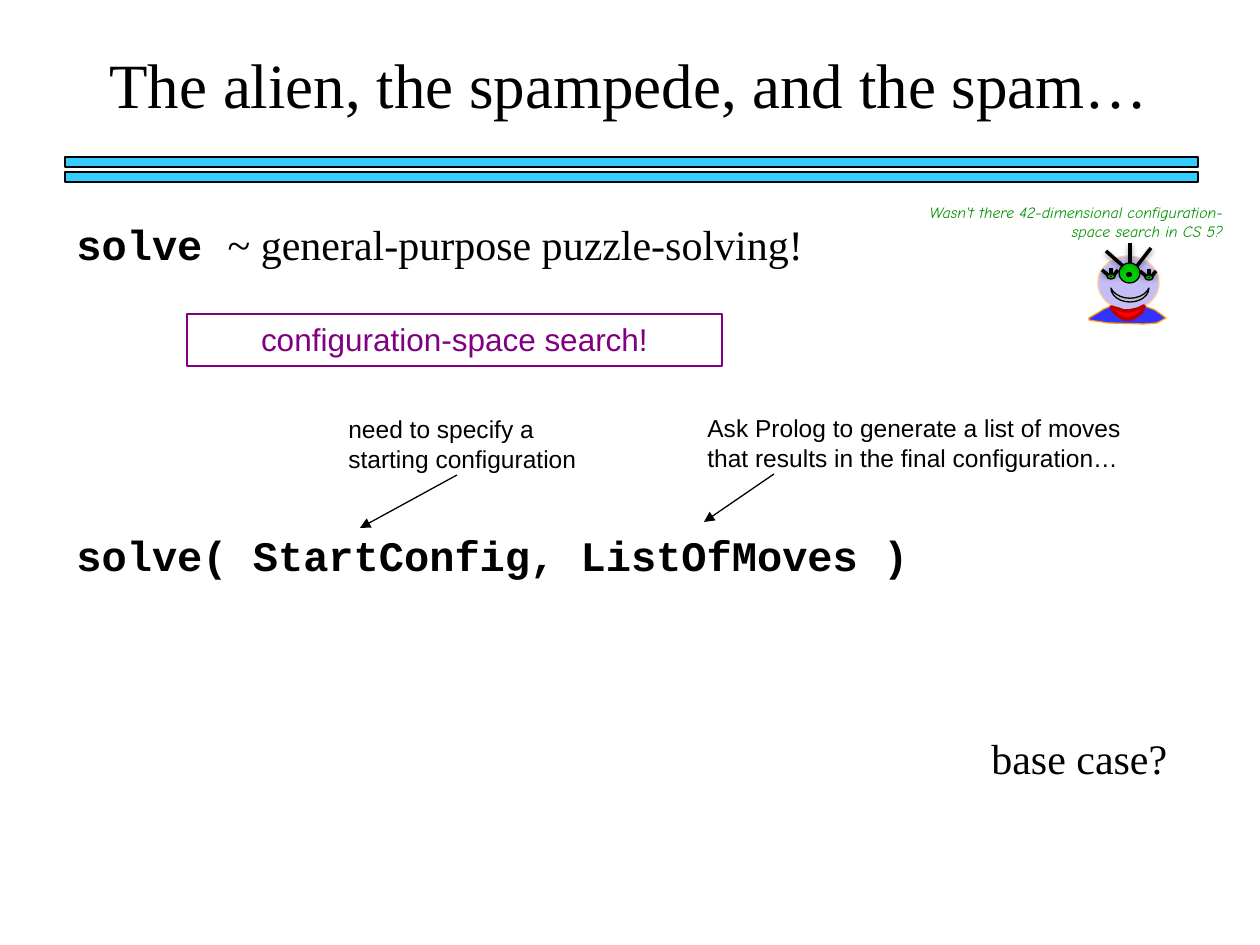
from lxml.etree import SubElement
from pptx import Presentation
from pptx.dml.color import RGBColor
from pptx.enum.shapes import MSO_CONNECTOR, MSO_SHAPE as SHAPE
from pptx.enum.text import MSO_ANCHOR, MSO_AUTO_SIZE, PP_ALIGN as ALIGN
from pptx.oxml.ns import qn
from pptx.util import Inches, Pt

PX = Inches(1) / 126
COLORS = {
    "black": "000000", "bar": "33CCFF", "purple": "800080", "remark": "009200",
    "body": "3333FF", "body edge": "FD9D0F", "head": "C4BDF6", "head edge": "FFCC99",
    "eye": "00CC00", "scarf": "FF0000", "scarf edge": "BD0000", "mouth": "C0C0C0",
}
SERIF, SANS, MONO, COMIC = "Times New Roman", "Arial", "Courier New", "Comic Neue"


def emu(*lengths):
    return [round(length * PX) for length in lengths]


def rgb(name):
    return RGBColor.from_string(COLORS[name])


class SlideBuilder:
    def __init__(self, slide):
        self.slide = slide
        self.shapes = slide.shapes

    def set_text(self, shape, runs, size, color="black", align=ALIGN.LEFT, wrap=True):
        """Fill a shape with one paragraph of (text, font, bold, italic) runs."""
        frame = shape.text_frame
        frame.word_wrap = wrap
        frame.auto_size = MSO_AUTO_SIZE.SHAPE_TO_FIT_TEXT
        frame.vertical_anchor = MSO_ANCHOR.TOP
        paragraph = frame.paragraphs[0]
        paragraph.alignment = align
        before = SubElement(paragraph._p.get_or_add_pPr(), qn("a:spcBef"))
        SubElement(before, qn("a:spcPct"), val="50000")
        for text, name, bold, italic in runs:
            run = paragraph.add_run()
            run.text = text
            font = run.font
            font.name, font.size, font.bold, font.italic = name, Pt(size), bold, italic
            font.color.rgb = rgb(color)

    def title(self, box, text):
        title = self.shapes.title
        title.left, title.top, title.width, title.height = emu(*box)
        self.set_text(title, [(text, SERIF, False, False)], 36, align=ALIGN.CENTER)

    def text(self, box, runs, size, **style):
        self.set_text(self.shapes.add_textbox(*emu(*box)), runs, size, **style)

    def paint(self, shape, fill, line, width=0.75):
        shape.shadow.inherit = False
        if fill:
            shape.fill.solid()
            shape.fill.fore_color.rgb = rgb(fill)
        else:
            shape.fill.background()
        if line:
            shape.line.color.rgb = rgb(line)
            shape.line.width = Pt(width)
        else:
            shape.line.fill.background()

    def shape(self, kind, box, fill, line="black"):
        shape = self.shapes.add_shape(kind, *emu(*box))
        self.paint(shape, fill, line)
        return shape

    def outline(self, points, fill, line, width):
        builder = self.shapes.build_freeform(*points[0], scale=PX)
        builder.add_line_segments(points[1:], close=True)
        self.paint(builder.convert_to_shape(), fill, line, width)

    def line(self, ends, width=0.75):
        line = self.shapes.add_connector(MSO_CONNECTOR.STRAIGHT, *emu(*ends))
        line.line.color.rgb = rgb("black")
        line.line.width = Pt(width)
        return line, SubElement(line._element.spPr, qn("a:effectLst"))

    def arrow(self, *ends):
        line, _ = self.line(ends)
        SubElement(line.line._get_or_add_ln(), qn("a:tailEnd"), type="triangle")

    def lash(self, *ends):
        """Draw a thick line with a soft shadow below it."""
        _, effects = self.line(ends, 2)
        shadow = SubElement(effects, qn("a:outerShdw"), blurRad=str(Pt(3.1)),
                            dist=str(Pt(1.6)), dir="5400000", rotWithShape="0")
        color = SubElement(shadow, qn("a:srgbClr"), val=COLORS["black"])
        SubElement(color, qn("a:alpha"), val="38000")

    def eye(self, ball, pupil):
        self.shape(SHAPE.OVAL, ball, "eye")
        self.shape(SHAPE.OVAL, pupil, "black", None)

    def alien(self):
        self.outline([(1128, 305), (1135, 304), (1142, 305), (1155, 310), (1162, 315),
                      (1166, 318), (1157, 323), (1144, 324), (1108, 323), (1095, 321),
                      (1089, 320), (1089, 318), (1096, 314), (1104, 309), (1109, 307),
                      (1116, 304), (1125, 305)], "body", "body edge", 0.75)
        self.shape(SHAPE.OVAL, (1098, 256, 61, 54), "head", "head edge")
        self.eye((1119, 263, 21, 20), (1126, 272, 6, 5))
        for hair in ((1123, 266, 1106, 251), (1130, 263, 1130, 243), (1137, 266, 1151, 248)):
            self.lash(*hair)
        self.outline([(1111, 307), (1114, 312), (1119, 316), (1124, 319), (1131, 319),
                      (1137, 316), (1142, 312), (1144, 306), (1138, 309), (1129, 311),
                      (1124, 311), (1118, 309)], "scarf", "scarf edge", 2)
        for x, y in ((1145, 275), (1107, 274)):
            self.eye((x, y, 8, 5), (x + 3, y + 2, 2, 1))
            self.lash(x + 1, y + 1, x - 5, y - 4)
            self.lash(x + 4, y, x + 4, y - 6)
            self.lash(x + 7, y + 1, x + 11, y - 4)
        mouth = self.shape(SHAPE.MOON, (1123, 276, 14, 38), "mouth")
        mouth.adjustments[0] = 0.27
        mouth.rotation = 270


def main():
    deck = Presentation()
    deck.slide_width, deck.slide_height = Inches(10), Inches(7.5)
    page = SlideBuilder(deck.slides.add_slide(deck.slide_layouts[5]))

    page.title((93, 39, 1072, 88), "The alien, the spampede, and the spam…")
    for top in (157, 172):
        page.shape(SHAPE.RECTANGLE, (65, top, 1133, 10), "bar")

    page.text((64, 212, 828, 63), [("solve ", MONO, True, False),
              ("~ general-purpose puzzle-solving!", SERIF, False, False)], 24)
    page.text((64, 523, 914, 63),
              [("solve( StartConfig, ListOfMoves )", MONO, True, False)], 24)
    search = page.shape(SHAPE.RECTANGLE, (187, 314, 535, 52), None, "purple")
    page.set_text(search, [("configuration-space search!", SANS, False, False)], 18,
                  "purple", ALIGN.CENTER)
    remark = "Wasn't there 42-dimensional configuration-space search in CS 5?"
    page.text((903, 197, 332, 50), [(remark, COMIC, False, True)], 9,
              color="remark", align=ALIGN.RIGHT)

    page.arrow(457, 475, 360, 528)
    page.arrow(774, 474, 704, 522)
    page.text((336, 408, 289, 72),
              [("need to specify a starting configuration", SANS, False, False)], 14)
    moves = "Ask Prolog to generate a list of moves that results in the final configuration…"
    page.text((695, 407, 446, 72), [(moves, SANS, False, False)], 14)
    page.text((979, 726, 202, 63), [("base case?", SERIF, False, False)], 24, wrap=False)

    page.alien()
    deck.save("out.pptx")


if __name__ == "__main__":
    main()
